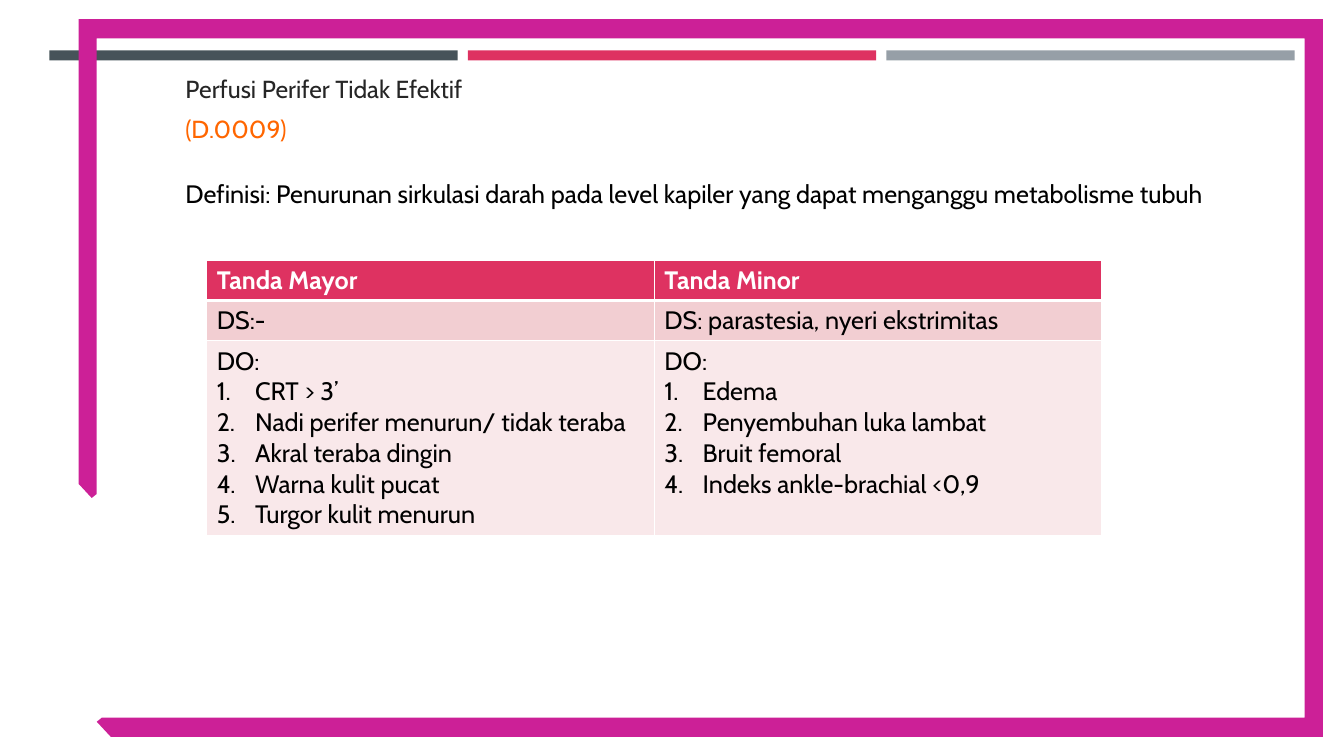
from lxml import etree
from pptx import Presentation
from pptx.dml.color import RGBColor
from pptx.enum.shapes import MSO_SHAPE
from pptx.enum.text import MSO_ANCHOR, PP_ALIGN
from pptx.oxml.ns import qn
from pptx.util import Inches, Pt

FONT = "Cabin"
COLORS = {
    "slate": "465359", "rose": "DE3261", "grey": "969FA7", "magenta": "CC2097",
    "title": "262626", "code": "FF6600", "text": "000000", "white": "FFFFFF",
    "band": "F2CED2", "pale": "F9E8EA",
}

TITLE = [("Perfusi Perifer Tidak Efektif", "title"), ("(D.0009)", "code")]
DEFINITION = ("Definisi: Penurunan sirkulasi darah pada level kapiler "
              "yang dapat menganggu metabolisme tubuh")
# Each cell: a lead line, then its numbered signs
SIGNS = [
    [["Tanda Mayor"], ["Tanda Minor"]],
    [["DS:-"], ["DS: parastesia, nyeri ekstrimitas"]],
    [
        ["DO:", "CRT > 3’", "Nadi perifer menurun/ tidak teraba",
         "Akral teraba dingin", "Warna kulit pucat", "Turgor kulit menurun"],
        ["DO:", "Edema", "Penyembuhan luka lambat", "Bruit femoral",
         "Indeks ankle-brachial <0,9"],
    ],
]
ROW_FILLS = ["rose", "band", "pale"]
ROW_HEIGHTS = [0.4, 0.4, 1.93]
COLUMN_WIDTH = 4.44

BARS = ["slate", "rose", "grey"]
BAR_LEFT, BAR_TOP, BAR_WIDTH, BAR_HEIGHT, BAR_GAP = 0.49, 0.5, 4.05, 0.1, 0.1
FRAME = [
    (0.78, 0.19), (13.12, 0.19), (13.12, 7.31), (1.1, 7.31), (0.96, 7.16),
    (1.01, 7.12), (12.94, 7.12), (12.94, 0.38), (0.96, 0.38), (0.96, 4.9),
    (0.91, 4.94), (0.78, 4.8),
]


def rgb(name):
    return RGBColor.from_string(COLORS[name])


def paint(shape, color):
    shape.fill.solid()
    shape.fill.fore_color.rgb = rgb(color)
    shape.line.fill.background()
    shape.shadow.inherit = False


def style(paragraph, size, color, bold=False):
    font = paragraph.font
    font.name, font.size, font.bold = FONT, Pt(size), bold
    font.color.rgb = rgb(color)


def hang(paragraph, indent):
    properties = paragraph._p.get_or_add_pPr()
    properties.set("marL", str(Inches(indent)))
    properties.set("indent", str(-Inches(indent)))
    return properties


def add_text_frame(slide, left, top, width, height):
    frame = slide.shapes.add_textbox(*map(Inches, (left, top, width, height))).text_frame
    frame.word_wrap = True
    return frame


def add_borders(cell, bottom):
    properties = cell._tc.get_or_add_tcPr()
    sides = [("L", 1), ("R", 1), ("T", 1), ("B", bottom)]
    for position, (side, width) in enumerate(sides):
        border = etree.Element(qn(f"a:ln{side}"), w=str(Pt(width)))
        fill = etree.SubElement(border, qn("a:solidFill"))
        etree.SubElement(fill, qn("a:srgbClr"), val=COLORS["white"])
        properties.insert(position, border)


def fill_cell(cell, lines, row):
    header = row == 0
    cell.fill.solid()
    cell.fill.fore_color.rgb = rgb(ROW_FILLS[row])
    add_borders(cell, 3 if header else 1)
    frame = cell.text_frame
    for i, line in enumerate(lines):
        paragraph = frame.add_paragraph() if i else frame.paragraphs[0]
        paragraph.text = line
        if i:
            etree.SubElement(hang(paragraph, 0.38), qn("a:buAutoNum"), type="arabicPeriod")
        style(paragraph, 18, "white" if header else "text", header)


def add_decor(slide):
    for i, color in enumerate(BARS):
        left = BAR_LEFT + i * (BAR_WIDTH + BAR_GAP)
        bar = slide.shapes.add_shape(
            MSO_SHAPE.RECTANGLE, *map(Inches, (left, BAR_TOP, BAR_WIDTH, BAR_HEIGHT)))
        paint(bar, color)
    corners = [(Inches(x), Inches(y)) for x, y in FRAME]
    outline = slide.shapes.build_freeform(*corners[0])
    outline.add_line_segments(corners[1:], close=True)
    paint(outline.convert_to_shape(), "magenta")


def add_heading(slide):
    title = add_text_frame(slide, 1.74, 0.7, 11.18, 0.79)
    title.vertical_anchor = MSO_ANCHOR.MIDDLE
    for i, (line, color) in enumerate(TITLE):
        paragraph = title.add_paragraph() if i else title.paragraphs[0]
        paragraph.text = line
        paragraph.line_spacing = 0.9
        paragraph.space_before = Pt(3.5 if i else 0)
        paragraph.space_after = Pt(6)
        style(paragraph, 17.6, color)

    definition = add_text_frame(slide, 1.74, 1.75, 10.81, 4.95).paragraphs[0]
    definition.text = DEFINITION
    definition.alignment = PP_ALIGN.JUSTIFY
    definition.line_spacing = 0.9
    hang(definition, 0.25)
    style(definition, 18, "text")


def add_signs(slide):
    columns = len(SIGNS[0])
    table = slide.shapes.add_table(
        len(SIGNS), columns, Inches(2.05), Inches(2.58),
        Inches(columns * COLUMN_WIDTH), Inches(sum(ROW_HEIGHTS))).table
    for column in table.columns:
        column.width = Inches(COLUMN_WIDTH)
    for row, cells in enumerate(SIGNS):
        table.rows[row].height = Inches(ROW_HEIGHTS[row])
        for column, lines in enumerate(cells):
            fill_cell(table.cell(row, column), lines, row)


def main():
    deck = Presentation()
    deck.slide_width, deck.slide_height = Inches(13.33), Inches(7.5)
    slide = deck.slides.add_slide(deck.slide_layouts[6])
    add_decor(slide)
    add_heading(slide)
    add_signs(slide)
    deck.save("out.pptx")


if __name__ == "__main__":
    main()
